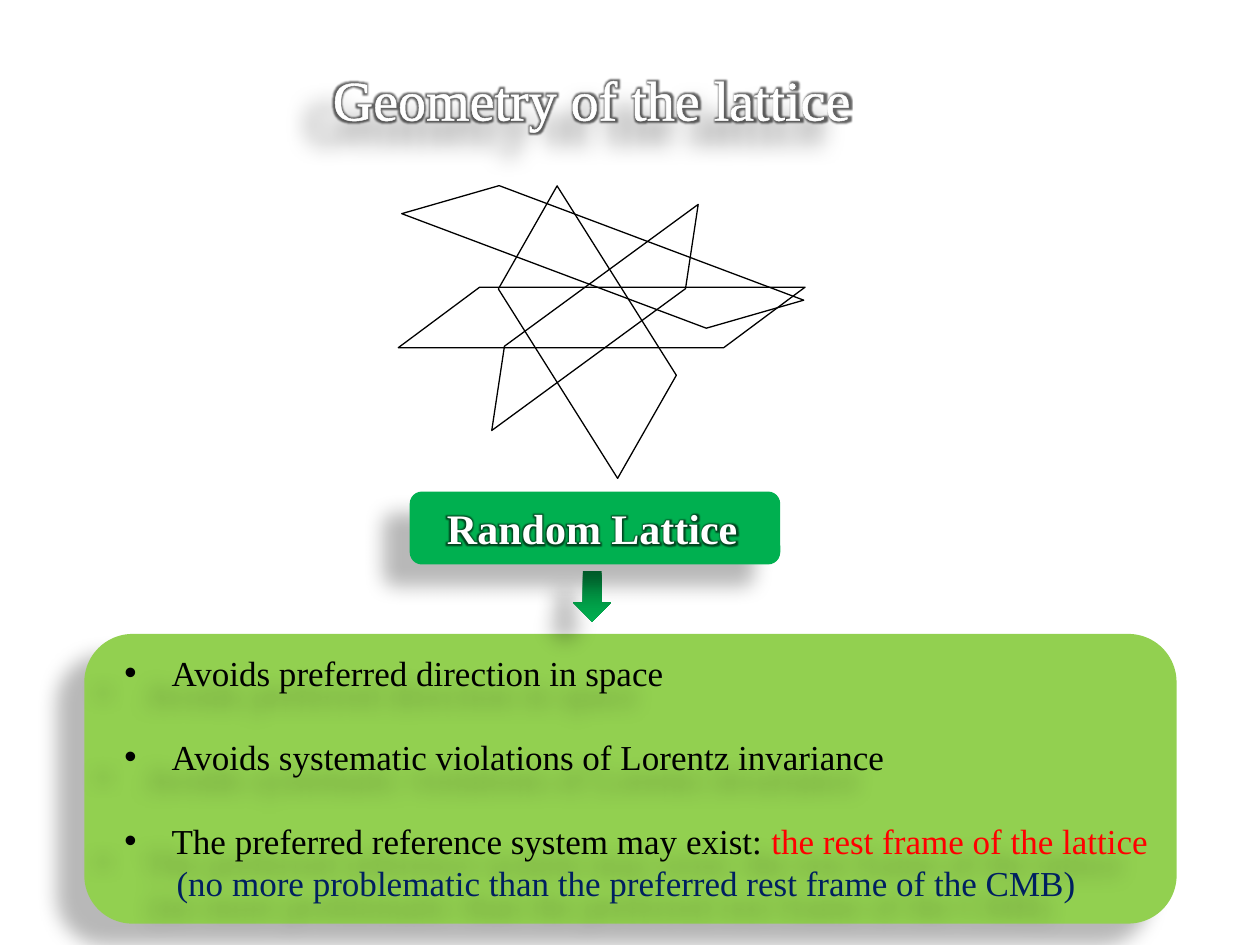
"""Build the slide on the geometry of a random lattice."""
from lxml.etree import SubElement
from pptx import Presentation
from pptx.dml.color import RGBColor
from pptx.enum.shapes import MSO_SHAPE
from pptx.enum.text import MSO_ANCHOR, PP_ALIGN
from pptx.oxml.ns import qn
from pptx.util import Cm, Pt

BLACK = RGBColor(0x00, 0x00, 0x00)
WHITE = RGBColor(0xFF, 0xFF, 0xFF)
GREEN = RGBColor(0x00, 0xB0, 0x50)
DARK = RGBColor(0x00, 0x7C, 0x38)
LIME = RGBColor(0x92, 0xD0, 0x50)
RED = RGBColor(0xFF, 0x00, 0x00)
NAVY = RGBColor(0x00, 0x20, 0x60)

TITLE = "Geometry of the lattice"
LABEL = "Random Lattice"
POINTS = [
    [("Avoids preferred direction in space", BLACK)],
    [("Avoids systematic violations of Lorentz invariance", BLACK)],
    [("The preferred reference system may exist: ", BLACK),
     ("the rest frame of the lattice", RED)],
]
REMARK = "(no more problematic than the preferred rest frame of the CMB)"
CELLS = [
    (8.03, 5.79, 8.2, 1.22, 0, False),
    (8.97, 5.79, 6.05, 1.22, 323.8, False),
    (9.02, 5.64, 5.64, 2.11, 237.8, True),
    (8.05, 4.57, 8.2, 1.22, 20.6, False),
]


def effect(parent, kind, alpha=None, **attrs):
    """Add one effect, black where it has a colour."""
    node = SubElement(parent, qn("a:" + kind), {k: str(v) for k, v in attrs.items()})
    if alpha:
        tint = SubElement(node, qn("a:srgbClr"), val="000000")
        SubElement(tint, qn("a:alpha"), val=str(alpha * 1000))


def shade(shape, soft=0):
    """Cast a shadow to the lower left, with soft edges if asked."""
    shape.shadow.inherit = False
    effects = shape._element.spPr.find(qn("a:effectLst"))
    effect(effects, "outerShdw", 28, blurRad=Pt(11.8), dist=Pt(19.7),
           dir=141 * 60000, algn="tl", rotWithShape=0)
    if soft:
        effect(effects, "softEdge", rad=Pt(soft))


def block(shapes, kind, place, fill, soft=0):
    """Add a filled shape with a shadow."""
    shape = shapes.add_shape(kind, *map(Cm, place))
    shape.fill.solid()
    shape.fill.fore_color.rgb = fill
    shape.line.fill.background()
    shade(shape, soft)
    return shape


def write(para, text, size=20, color=BLACK, bold=False, glow=0, edge=0):
    """Add a run of text in the given format."""
    run = para.add_run()
    run.text = text
    font = run.font
    font.name, font.size, font.bold = "Times New Roman", Pt(size), bold
    font.fill.solid()
    font.fill.fore_color.rgb = color
    props = run._r.get_or_add_rPr()
    if glow:
        effects = SubElement(props, qn("a:effectLst"))
        props.find(qn("a:solidFill")).addnext(effects)
        effect(effects, "glow", 60, rad=Pt(glow))
    if edge:
        line = SubElement(props, qn("a:ln"), w=str(Pt(edge)))
        props.insert(0, line)
        paint = SubElement(line, qn("a:solidFill"))
        SubElement(paint, qn("a:srgbClr"), val=str(color))


def head(shape, text, inset, **form):
    """Write one left-aligned line in the middle of a shape."""
    frame = shape.text_frame
    frame.margin_left = Cm(inset)
    frame.vertical_anchor = MSO_ANCHOR.MIDDLE
    frame.paragraphs[0].alignment = PP_ALIGN.LEFT
    write(frame.paragraphs[0], text, color=WHITE, **form)


def lattice(shapes):
    """Draw the overlapping cells as a group."""
    group = shapes.add_group_shape()
    for *place, turn, flip in CELLS:
        cell = group.shapes.add_shape(MSO_SHAPE.FLOWCHART_DATA, *map(Cm, place))
        cell.rotation = turn
        if flip:
            cell._element.spPr.xfrm.set("flipV", "1")
        cell.fill.background()
        cell.line.color.rgb = BLACK
        cell.line.width = Pt(0.75)
        cell.shadow.inherit = False


def notes(shapes):
    """Write the bulleted points and the closing remark."""
    box = shapes.add_textbox(Cm(2.26), Cm(13), Cm(21.54), Cm(5.38))
    shade(box)
    frame = box.text_frame
    frame.word_wrap = True
    for i, runs in enumerate(POINTS):
        para = frame.add_paragraph() if i else frame.paragraphs[0]
        props = para._p.get_or_add_pPr()
        props.set("marL", str(Cm(0.95)))
        props.set("indent", str(-Cm(0.95)))
        if i:
            para.space_before = Pt(24)
        SubElement(props, qn("a:buFont"), typeface="Arial")
        SubElement(props, qn("a:buChar"), char="•")
        for text, color in runs:
            write(para, text, color=color)
    para = frame.add_paragraph()
    para._p.get_or_add_pPr().set("marL", str(Cm(1.05)))
    write(para, REMARK, color=NAVY)


def main():
    """Build and save the slide."""
    deck = Presentation()
    deck.slide_width, deck.slide_height = Cm(25.4), Cm(19.05)
    shapes = deck.slides.add_slide(deck.slide_layouts[6]).shapes
    block(shapes, MSO_SHAPE.ROUNDED_RECTANGLE, (1.7, 12.78, 22.02, 5.84), LIME)
    title = block(shapes, MSO_SHAPE.RECTANGLE, (6.17, 0.81, 12.32, 2.34), GREEN, soft=50)
    head(title, TITLE, 0.54, size=32, glow=5, edge=1.45)
    notes(shapes)
    arrow = block(shapes, MSO_SHAPE.DOWN_ARROW, (11.56, 11.51, 0.76, 1.02), GREEN)
    arrow.fill.gradient()
    arrow.fill.gradient_angle = 270
    for stop, color in zip(arrow.fill.gradient_stops, (DARK, GREEN)):
        stop.color.rgb = color
    lattice(shapes)
    label = block(shapes, MSO_SHAPE.ROUNDED_RECTANGLE, (8.26, 9.91, 7.47, 1.47), GREEN)
    head(label, LABEL, 0.68, size=24, bold=True, glow=5)
    deck.save("out.pptx")


if __name__ == "__main__":
    main()
